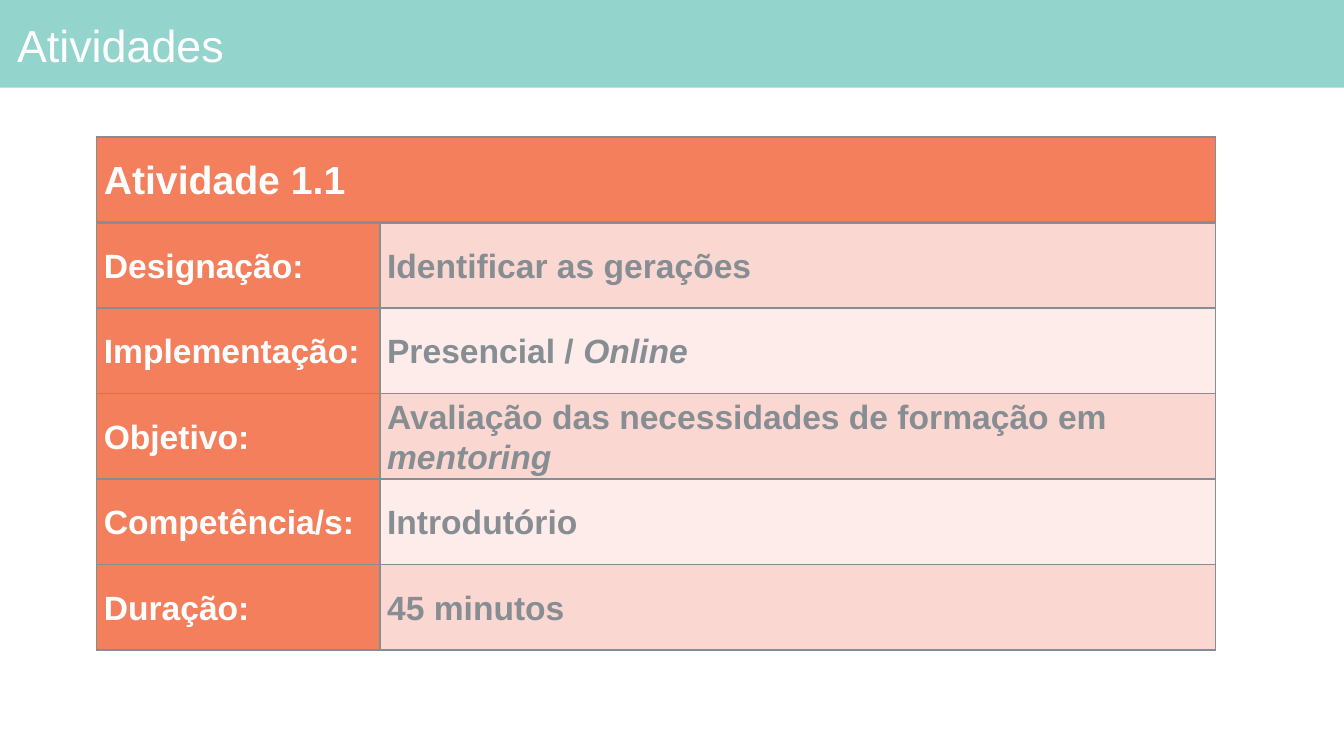
from lxml.etree import SubElement
from pptx import Presentation
from pptx.dml.color import RGBColor
from pptx.enum.shapes import MSO_SHAPE
from pptx.enum.text import MSO_ANCHOR as ANCHOR, PP_ALIGN as ALIGN
from pptx.oxml.ns import qn
from pptx.util import Inches, Pt

TEAL, ORANGE, WHITE, GREY = "93D4CC", "F47F5D", "FFFFFF", "868E93"
BANDS = ("FBD7D1", "FDECE9")

HEADING = "Atividade 1.1"
# Each value is a list of (text, italic) spans.
DETAILS = [
    ("Designação:", [("Identificar as gerações", False)]),
    ("Implementação:", [("Presencial / ", False), ("Online", True)]),
    ("Objetivo:", [("Avaliação das necessidades de formação em ", False),
                   ("mentoring", True)]),
    ("Competência/s:", [("Introdutório", False)]),
    ("Duração:", [("45 minutos", False)]),
]


def paint(target, color):
    """Give a fill or a font a solid colour."""
    if hasattr(target, "solid"):
        target.solid()
        target.fore_color.rgb = RGBColor.from_string(color)
    else:
        target.color.rgb = RGBColor.from_string(color)


def add_span(para, text, size, color, bold=False, italic=False):
    span = para.add_run()
    span.text = text
    font = span.font
    font.name, font.size = "Arial", Pt(size)
    font.bold, font.italic = bold, italic
    paint(font, color)


def add_borders(cell, bottom=1, top=1):
    properties = cell._tc.get_or_add_tcPr()
    for side, width in (("L", 1), ("R", 1), ("T", top), ("B", bottom)):
        line = SubElement(properties, qn(f"a:ln{side}"), w=str(Pt(width)))
        fill = SubElement(line, qn("a:solidFill"))
        SubElement(fill, qn("a:srgbClr"), val=GREY)


def style_cell(cell, fill, bottom=1, top=1):
    add_borders(cell, bottom, top)
    paint(cell.fill, fill)
    cell.vertical_anchor = ANCHOR.MIDDLE
    cell.margin_left = cell.margin_right = Inches(0.07)
    cell.margin_top = cell.margin_bottom = 0


def fill_cell(cell, spans, size, color):
    para = cell.text_frame.paragraphs[0]
    para.line_spacing = 1.07
    for text, italic in spans:
        add_span(para, text, size, color, bold=True, italic=italic)


def add_title_band(page, text, left, top, width, height):
    band = page.shapes.add_shape(MSO_SHAPE.RECTANGLE, Inches(left), Inches(top),
                                 Inches(width), Inches(height))
    band.shadow.inherit = False
    paint(band.fill, TEAL)
    band.line.fill.background()
    page.shapes._spTree.insert(2, band._element)  # behind the title

    title = page.shapes.title
    title.left, title.top = Inches(left + 0.11), Inches(top + 0.09)
    title.width, title.height = Inches(width - 0.27), Inches(height - 0.09)
    frame = title.text_frame
    frame.word_wrap = True
    frame.vertical_anchor = ANCHOR.MIDDLE
    frame.margin_left = frame.margin_right = Inches(0.06)
    frame.margin_top = frame.margin_bottom = Inches(0.06)
    para = frame.paragraphs[0]
    para.alignment = ALIGN.LEFT
    para.line_spacing = 0.9
    add_span(para, text, 32, WHITE)


def add_activity_table(page, left, top, width, height):
    row_count = len(DETAILS) + 1
    table = page.shapes.add_table(row_count, 2, Inches(left), Inches(top),
                                  Inches(width), Inches(height)).table
    label_width = 2.81
    table.columns[0].width = Inches(label_width)
    table.columns[1].width = Inches(width - label_width)
    for row in table.rows:
        row.height = Inches(height / row_count)

    heading = table.cell(0, 0)
    heading.merge(table.cell(0, 1))
    for column in range(2):
        style_cell(table.cell(0, column), ORANGE, bottom=3)
    fill_cell(heading, [(HEADING, False)], 28, WHITE)

    for index, (label, value) in enumerate(DETAILS):
        label_cell, value_cell = table.rows[index + 1].cells
        top_width = 3 if index == 0 else 1
        style_cell(label_cell, ORANGE, top=top_width)
        style_cell(value_cell, BANDS[index % 2], top=top_width)
        fill_cell(label_cell, [(label, False)], 24, WHITE)
        fill_cell(value_cell, value, 24, GREY)


def main():
    deck = Presentation()
    deck.slide_width, deck.slide_height = Inches(13.33), Inches(7.5)
    page = deck.slides.add_slide(deck.slide_layouts[5])
    add_title_band(page, "Atividades", 0, 0, 13.33, 0.87)
    add_activity_table(page, 0.96, 1.36, 11.1, 5.09)
    deck.save("out.pptx")


if __name__ == "__main__":
    main()
